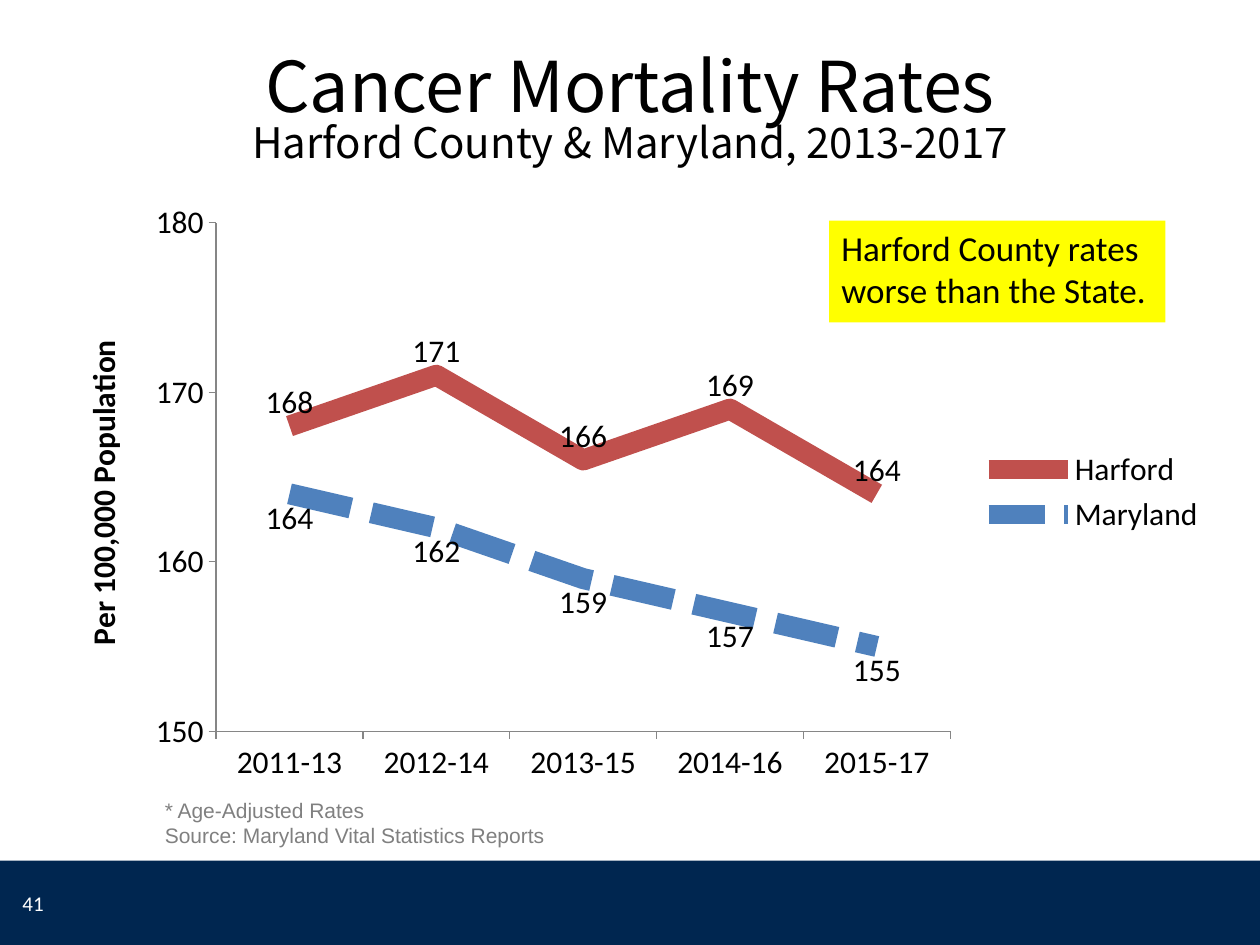
from dataclasses import dataclass

from lxml import etree
from pptx import Presentation
from pptx.chart import data as chart_data
from pptx.dml.color import RGBColor
from pptx.enum import chart as chart_enum, dml, shapes, text
from pptx.oxml import ns
from pptx.util import Inches, Pt


@dataclass(frozen=True)
class Theme:
    black: str = "000000"
    white: str = "FFFFFF"
    navy: str = "002650"
    yellow: str = "FFFF00"
    gray: str = "808080"
    axis: str = "868686"
    harford: str = "C0504D"
    maryland: str = "4F81BD"
    heading: str = "Noto Sans CJK SC"
    body: str = "Calibri"
    note: str = "Arial"
    title_size: int = 40
    subtitle_size: int = 24
    callout_size: int = 20
    chart_size: int = 18
    note_size: int = 12


THEME = Theme()


def set_attributes(target, **values):
    for name, value in values.items():
        setattr(target, name, value)


def style_font(font, name, size, color):
    set_attributes(font, name=name, size=Pt(size))
    font.color.rgb = RGBColor.from_string(color)


def add_box(slide, box, lines, font_name, color, **frame_format):
    """Add a text box; lines holds (wording, size) pairs, one per paragraph."""
    shape = slide.shapes.add_textbox(*map(Inches, box))
    set_attributes(shape.text_frame, word_wrap=True, **frame_format)
    for index, (wording, size) in enumerate(lines):
        frame = shape.text_frame
        paragraph = frame.paragraphs[0] if index == 0 else frame.add_paragraph()
        run = paragraph.add_run()
        run.text = wording
        style_font(run.font, font_name, size, color)
    return shape


def add_rectangle(slide, box, color):
    shape = slide.shapes.add_shape(shapes.MSO_SHAPE.RECTANGLE, *map(Inches, box))
    shape.shadow.inherit = False
    shape.fill.solid()
    shape.fill.fore_color.rgb = RGBColor.from_string(color)
    shape.line.fill.background()
    return shape


def add_title(slide, box):
    lines = [("Cancer Mortality Rates", THEME.title_size),
             ("Harford County & Maryland, 2013-2017", THEME.subtitle_size)]
    shape = add_box(slide, box, lines, THEME.heading, THEME.black,
                    vertical_anchor=text.MSO_ANCHOR.MIDDLE,
                    margin_top=0, margin_bottom=0)
    for paragraph in shape.text_frame.paragraphs:
        set_attributes(paragraph, alignment=text.PP_ALIGN.CENTER, line_spacing=0.8)


def add_footer(slide, box):
    left, top, _, height = box
    add_rectangle(slide, box, THEME.navy)
    add_box(slide, (left + 0.08, top + 0.14, 2.33, 0.4),
            [("41", THEME.note_size)], THEME.body, THEME.white,
            vertical_anchor=text.MSO_ANCHOR.MIDDLE)


def set_plot_layout(chart, **fractions):
    plot_area = chart._chartSpace.chart.plotArea
    for old in plot_area.findall(ns.qn("c:layout")):
        plot_area.remove(old)
    layout = etree.Element(ns.qn("c:layout"))
    manual = etree.SubElement(layout, ns.qn("c:manualLayout"))
    settings = {"layoutTarget": "inner", "xMode": "edge", "yMode": "edge", **fractions}
    for name, value in settings.items():
        etree.SubElement(manual, ns.qn(f"c:{name}")).set("val", str(value))
    plot_area.insert(0, layout)


def style_axes(chart):
    for axis in (chart.category_axis, chart.value_axis):
        set_attributes(axis, has_major_gridlines=False,
                       major_tick_mark=chart_enum.XL_TICK_MARK.OUTSIDE,
                       minor_tick_mark=chart_enum.XL_TICK_MARK.NONE)
        axis.format.line.color.rgb = RGBColor.from_string(THEME.axis)
        axis.format.line.width = Pt(0.75)
    value_axis = chart.value_axis
    set_attributes(value_axis, minimum_scale=150, maximum_scale=180, major_unit=10)
    set_attributes(value_axis.tick_labels, number_format="0",
                   number_format_is_linked=False)
    title_frame = value_axis.axis_title.text_frame
    title_frame.text = "Per 100,000 Population"
    font = title_frame.paragraphs[0].runs[0].font
    style_font(font, THEME.body, THEME.chart_size, THEME.black)
    font.bold = True


def add_rate_chart(slide, box):
    position = chart_enum.XL_LABEL_POSITION
    series_formats = [
        ("Harford", (168, 171, 166, 169, 164), THEME.harford, position.ABOVE, None),
        ("Maryland", (164, 162, 159, 157, 155), THEME.maryland, position.BELOW,
         dml.MSO_LINE.SQUARE_DOT),
    ]
    rates = chart_data.CategoryChartData(number_format="0")
    rates.categories = ["2011-13", "2012-14", "2013-15", "2014-16", "2015-17"]
    for name, values, *_ in series_formats:
        rates.add_series(name, values)
    chart = slide.shapes.add_chart(
        chart_enum.XL_CHART_TYPE.LINE, *map(Inches, box), rates).chart
    style_font(chart.font, THEME.body, THEME.chart_size, THEME.black)
    set_attributes(chart, has_title=False, has_legend=True)
    set_attributes(chart.legend, include_in_layout=False,
                   position=chart_enum.XL_LEGEND_POSITION.RIGHT)
    chart.plots[0].vary_by_categories = False
    style_axes(chart)
    set_plot_layout(chart, x=0.14, y=0.05, w=0.63, h=0.85)

    # Lines and value labels
    for series, (_, _, color, label_position, dash) in zip(chart.plots[0].series,
                                                           series_formats):
        series.smooth = False
        series.marker.style = chart_enum.XL_MARKER_STYLE.NONE
        series.format.line.color.rgb = RGBColor.from_string(color)
        set_attributes(series.format.line, width=Pt(12), dash_style=dash)
        labels = series.data_labels
        set_attributes(labels, show_value=True, position=label_position,
                       number_format="0", number_format_is_linked=False)
        style_font(labels.font, THEME.body, THEME.chart_size, THEME.black)


def add_source_note(slide, box):
    lines = ["* Age-Adjusted Rates", "Source: Maryland Vital Statistics Reports"]
    add_box(slide, box, [(line, THEME.note_size) for line in lines],
            THEME.note, THEME.gray)


def add_callout(slide, box):
    shape = add_rectangle(slide, box, THEME.yellow)
    set_attributes(shape.text_frame, word_wrap=True,
                   vertical_anchor=text.MSO_ANCHOR.TOP)
    paragraph = shape.text_frame.paragraphs[0]
    paragraph.alignment = text.PP_ALIGN.LEFT
    run = paragraph.add_run()
    run.text = "Harford County rates worse than the State."
    style_font(run.font, THEME.body, THEME.callout_size, THEME.black)


def main():
    presentation = Presentation()
    set_attributes(presentation, slide_width=Inches(10), slide_height=Inches(7.5))
    slide = presentation.slides.add_slide(presentation.slide_layouts[6])
    add_footer(slide, (0, 6.83, 10, 0.67))
    add_title(slide, (0.5, 0.38, 9, 1.03))
    add_rate_chart(slide, (0.42, 1.53, 9.25, 4.75))
    add_source_note(slide, (1.21, 6.28, 3.83, 0.5))
    add_callout(slide, (6.58, 1.75, 2.67, 0.81))
    presentation.save("out.pptx")


if __name__ == "__main__":
    main()
